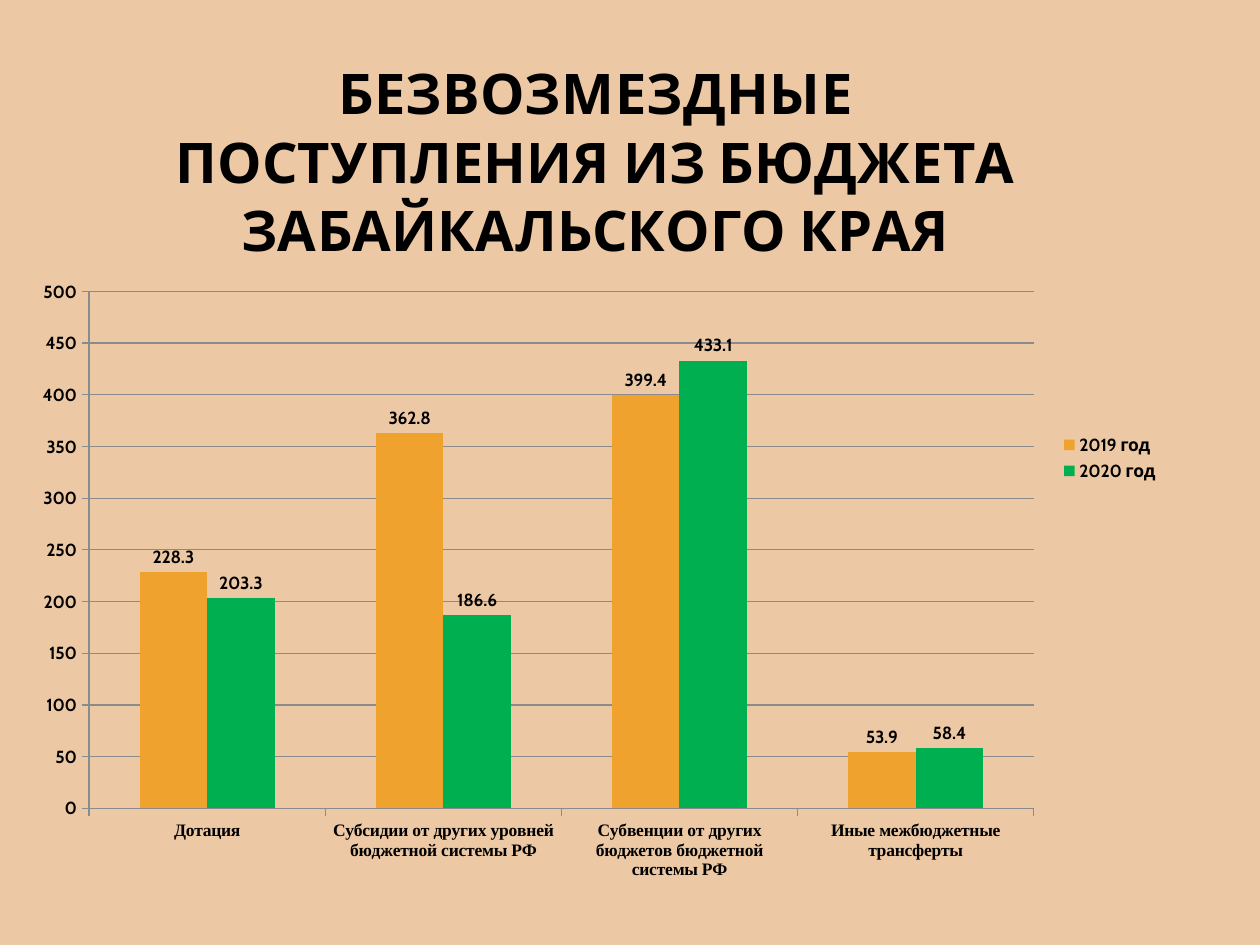
from lxml import etree
from pptx import Presentation
from pptx import util as u
from pptx.chart.data import CategoryChartData
from pptx.dml.color import RGBColor
from pptx.enum import chart as kinds
from pptx.oxml.ns import qn

PX = 914400 / 126
COLORS = {
    "background": "ECC8A4",
    "text": "000000",
    "grid": "8B8B8B",
    "2019 год": "F0A22E",
    "2020 год": "00B050",
}
TITLE = "БЕЗВОЗМЕЗДНЫЕ ПОСТУПЛЕНИЯ ИЗ БЮДЖЕТА ЗАБАЙКАЛЬСКОГО КРАЯ"
CATEGORIES = [
    "Дотация",
    "Субсидии от других уровней бюджетной системы РФ",
    "Субвенции от других бюджетов бюджетной системы РФ",
    "Иные межбюджетные трансферты",
]
REVENUES = {
    "2019 год": (228.3, 362.8, 399.4, 53.9),
    "2020 год": (203.3, 186.6, 433.1, 58.4),
}


def px(length):
    return u.Emu(round(length * PX))


def color(name):
    return RGBColor.from_string(COLORS[name])


def set_font(font, size=10, name="Cabin"):
    font.size = u.Pt(size)
    font.name = name
    font.bold = True
    font.color.rgb = color("text")


def set_line(line):
    line.color.rgb = color("grid")
    line.width = u.Pt(0.75)


def add_revenue_chart(page, left, top, width, height):
    data = CategoryChartData()
    data.categories = CATEGORIES
    for name, values in REVENUES.items():
        data.add_series(name, values)
    frame = page.shapes.add_chart(
        kinds.XL_CHART_TYPE.COLUMN_CLUSTERED,
        px(left), px(top), px(width), px(height), data,
    )
    chart = frame.chart
    set_font(chart.font)
    return chart


def format_title(chart):
    chart.has_title = True
    frame = chart.chart_title.text_frame
    frame.text = TITLE
    set_font(frame.paragraphs[0].font, 32)
    chart.chart_title.include_in_layout = False


def format_axis(axis, font_name):
    set_font(axis.tick_labels.font, name=font_name)
    axis.major_tick_mark = kinds.XL_TICK_MARK.OUTSIDE
    set_line(axis.format.line)


def format_axes(chart):
    format_axis(chart.category_axis, "Times New Roman")
    values = chart.value_axis
    format_axis(values, "Cabin")
    values.minimum_scale = 0
    values.maximum_scale = 500
    values.major_unit = 50
    values.has_major_gridlines = True
    set_line(values.major_gridlines.format.line)


def format_columns(chart):
    plot = chart.plots[0]
    plot.gap_width = 150
    plot.overlap = 0
    plot.vary_by_categories = False
    for series in plot.series:
        series.format.fill.solid()
        series.format.fill.fore_color.rgb = color(series.name)
        labels = series.data_labels
        labels.show_value = True
        labels.position = kinds.XL_LABEL_POSITION.OUTSIDE_END
        set_font(labels.font)


def format_legend(chart):
    chart.has_legend = True
    chart.legend.position = kinds.XL_LEGEND_POSITION.RIGHT
    chart.legend.include_in_layout = False
    set_font(chart.legend.font)


def place_plot(chart, left, top, width, height):
    area = chart.plots[0]._element.getparent()
    for old in area.findall(qn("c:layout")):
        area.remove(old)
    layout = etree.Element(qn("c:layout"))
    manual = etree.SubElement(layout, qn("c:manualLayout"))
    settings = {
        "layoutTarget": "inner", "xMode": "edge", "yMode": "edge",
        "x": left, "y": top, "w": width, "h": height,
    }
    for tag, value in settings.items():
        etree.SubElement(manual, qn(f"c:{tag}")).set("val", str(value))
    area.insert(0, layout)


def main():
    deck = Presentation()
    deck.slide_width, deck.slide_height = px(1260), px(945)
    page = deck.slides.add_slide(deck.slide_layouts[6])
    page.background.fill.solid()
    page.background.fill.fore_color.rgb = color("background")
    chart = add_revenue_chart(page, 20, 20, 1152, 876)
    format_title(chart)
    format_axes(chart)
    format_columns(chart)
    format_legend(chart)
    place_plot(chart, 0.06, 0.31, 0.82, 0.59)
    deck.save("out.pptx")


if __name__ == "__main__":
    main()
